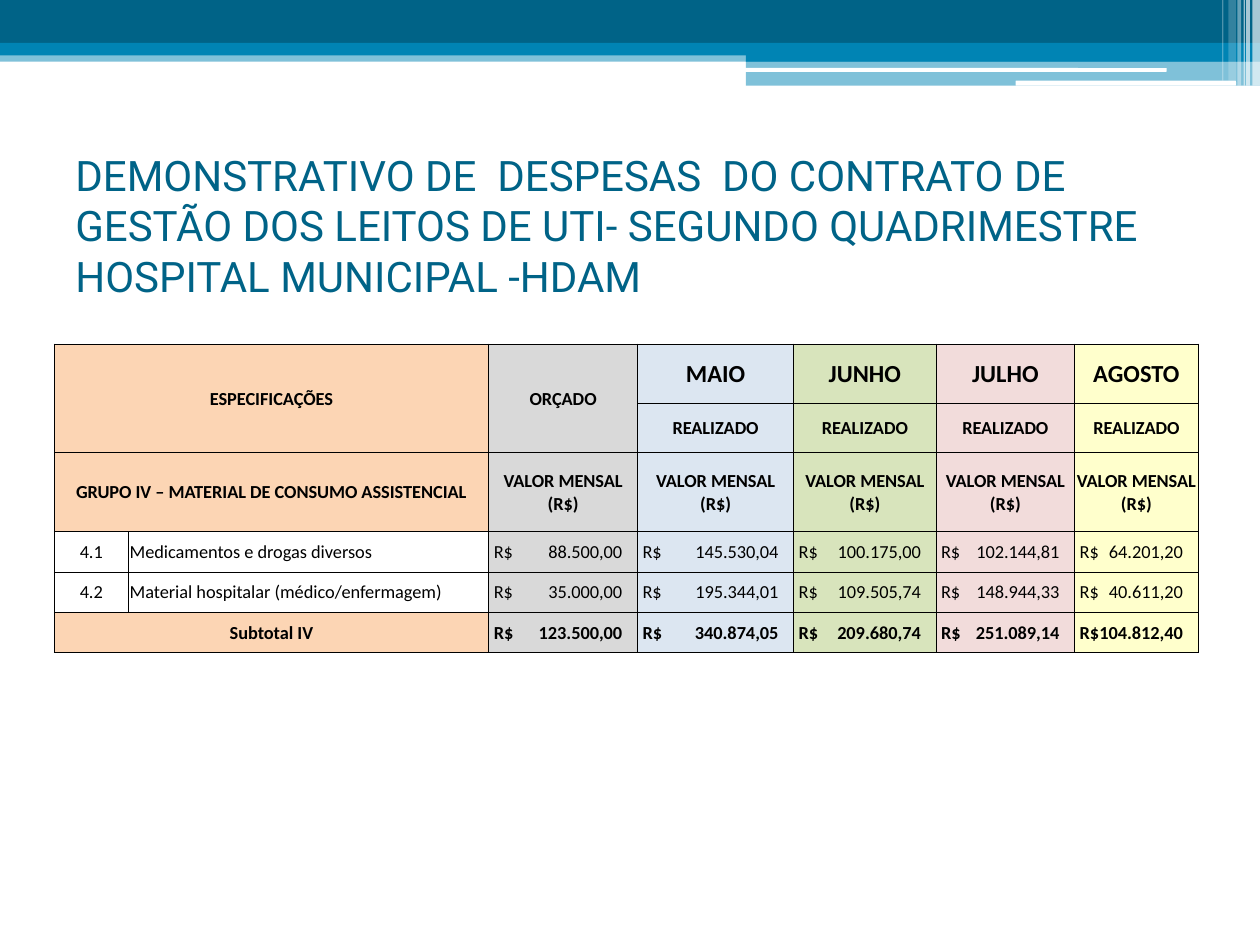
from lxml import etree
from pptx import Presentation
from pptx.dml.color import RGBColor
from pptx.enum.shapes import MSO_SHAPE
from pptx.enum.text import MSO_ANCHOR, PP_ALIGN
from pptx.oxml.ns import qn
from pptx.util import Inches, Pt

RECT, ROUND = MSO_SHAPE.RECTANGLE, MSO_SHAPE.ROUNDED_RECTANGLE
MID = MSO_ANCHOR.MIDDLE
LEFT, CENTER = PP_ALIGN.LEFT, PP_ALIGN.CENTER

DEEP, BLUE, WHITE, BLACK = "006387", "0084B4", "FFFFFF", "000000"
PEACH = "FCD5B4"
TINTS = ["D9D9D9", "DCE6F1", "D8E4BC", "F2DCDB", "FFFFCC"]


def tint(code):
    return RGBColor.from_string(code)


def apply(target, values):
    for name, value in values.items():
        setattr(target, name, value)


class Deck:
    COLS, ROWS = 100, 75
    HEAD = {"name": "Roboto", "size": Pt(24)}
    BODY = {"name": "Calibri", "size": Pt(10.5), "bold": False}
    BOLD = {**BODY, "bold": True}
    MONTH = {**BOLD, "size": Pt(14)}

    def __init__(self, wide, high):
        self.file = Presentation()
        apply(self.file, {"slide_width": Inches(wide), "slide_height": Inches(high)})
        self.unit_x = self.file.slide_width / self.COLS
        self.unit_y = self.file.slide_height / self.ROWS
        self.slide = self.file.slides.add_slide(self.file.slide_layouts[6])

    def across(self, cols):
        return round(cols * self.unit_x)

    def down(self, rows):
        return round(rows * self.unit_y)

    def place(self, col, row, wide, high):
        return self.across(col), self.down(row), self.across(wide), self.down(high)

    def bar(self, spot, code, alpha=100, kind=RECT):
        shape = self.slide.shapes.add_shape(kind, *self.place(*spot))
        shape.shadow.inherit = False
        shape.fill.solid()
        shape.fill.fore_color.rgb = tint(code)
        shape.line.fill.background()
        if alpha < 100:
            color = shape.fill._xPr.find(".//" + qn("a:srgbClr"))
            etree.SubElement(color, qn("a:alpha"), val=str(alpha * 1000))

    def label(self, frame, text, style, code, align=LEFT):
        frame.text = text
        for para in frame.paragraphs:
            para.alignment = align
            for run in para.runs:
                apply(run.font, style)
                run.font.color.rgb = tint(code)

    def title(self, spot, text):
        frame = self.slide.shapes.add_textbox(*self.place(*spot)).text_frame
        apply(frame, {"word_wrap": True, "vertical_anchor": MID})
        self.label(frame, text, self.HEAD, DEEP)

    def table(self, spot, cols, rows):
        shape = self.slide.shapes.add_table(len(rows), len(cols), *self.place(*spot))
        grid = shape.table
        apply(grid, {"first_row": False, "horz_banding": False})
        for item, wide in zip(grid.columns, cols):
            item.width = self.across(wide)
        for item, high in zip(grid.rows, rows):
            item.height = self.down(high)
        for cell in grid.iter_cells():
            apply(cell, {"margin_left": self.across(0.1), "margin_right": self.across(0.1),
                         "margin_top": self.down(0.1), "margin_bottom": 0,
                         "vertical_anchor": MID})
            self.edge(cell)
            cell.fill.background()
        return grid

    def edge(self, cell):
        props = cell._tc.get_or_add_tcPr()
        for side in ("lnL", "lnR", "lnT", "lnB"):
            line = etree.SubElement(props, qn("a:" + side), w=str(Pt(0.5)))
            fill = etree.SubElement(line, qn("a:solidFill"))
            etree.SubElement(fill, qn("a:srgbClr"), val=BLACK)

    def cell(self, cell, text, style, code=None, align=CENTER):
        self.label(cell.text_frame, text, style, BLACK, align)
        if code:
            cell.fill.solid()
            cell.fill.fore_color.rgb = tint(code)

    def money(self, cell, value, style, code, wide):
        self.cell(cell, "R$\t" + value, style, code, LEFT)
        cell.margin_left = self.across(0.4)
        props = cell.text_frame.paragraphs[0]._p.get_or_add_pPr()
        tabs = etree.SubElement(props, qn("a:tabLst"))
        etree.SubElement(tabs, qn("a:tab"), pos=str(self.across(wide - 1.6)), algn="r")


def main():
    deck = Deck(10, 7.5)
    deck.bar((0, 4, 100, 0.9), BLUE, 50)
    deck.bar((0, 0, 100, 3.4), DEEP)
    deck.bar((0, 3.4, 100, 1), BLUE)
    deck.bar((59.2, 3.9, 40.8, 1), BLUE)
    deck.bar((59.2, 4.8, 40.8, 2), BLUE, 50)
    deck.bar((59.1, 5.4, 33.5, 0.3), WHITE, kind=ROUND)
    deck.bar((80.6, 6.4, 17.5, 0.4), WHITE, kind=ROUND)
    for col, wide, high, alpha in [(99.4, 0.6, 6.8, 65), (98.9, 0.3, 6.8, 65),
                                   (98.7, 0.1, 6.8, 60), (98.2, 0.3, 6.8, 40),
                                   (97.5, 0.6, 6.4, 20), (97, 0.1, 6.4, 30)]:
        deck.bar((col, 0, wide, high), WHITE, alpha)

    cols = [5.9, 28.6, 11.8, 12.4, 11.3, 11, 9.8]
    rows = [4.7, 3.9, 6.3, 3.2, 3.2, 3.2]
    grid = deck.table((4.3, 27.3, sum(cols), sum(rows)), cols, rows)
    for top, left, low, right in [(0, 0, 1, 1), (0, 2, 1, 2), (2, 0, 2, 1), (5, 0, 5, 1)]:
        grid.cell(top, left).merge(grid.cell(low, right))

    for row, text in [(0, "ESPECIFICAÇÕES"),
                      (2, "GRUPO IV – MATERIAL DE CONSUMO ASSISTENCIAL"),
                      (5, "Subtotal IV")]:
        deck.cell(grid.cell(row, 0), text, deck.BOLD, PEACH)
    for row, code, text in [(3, "4.1", "Medicamentos e drogas diversos"),
                            (4, "4.2", "Material hospitalar (médico/enfermagem)")]:
        deck.cell(grid.cell(row, 0), code, deck.BODY)
        deck.cell(grid.cell(row, 1), text, deck.BODY, align=LEFT)

    deck.cell(grid.cell(0, 2), "ORÇADO", deck.BOLD, TINTS[0])
    months = ["MAIO", "JUNHO", "JULHO", "AGOSTO"]
    for col, (month, code) in enumerate(zip(months, TINTS[1:]), 3):
        deck.cell(grid.cell(0, col), month, deck.MONTH, code)
        deck.cell(grid.cell(1, col), "REALIZADO", deck.BOLD, code)

    sums = [
        ["88.500,00", "145.530,04", "100.175,00", "102.144,81", "64.201,20"],
        ["35.000,00", "195.344,01", "109.505,74", "148.944,33", "40.611,20"],
        ["123.500,00", "340.874,05", "209.680,74", "251.089,14", "104.812,40"],
    ]
    styles = [deck.BODY, deck.BODY, deck.BOLD]
    for col, code in enumerate(TINTS, 2):
        deck.cell(grid.cell(2, col), "VALOR MENSAL (R$)", deck.BOLD, code)
        for row, (line, style) in enumerate(zip(sums, styles), 3):
            deck.money(grid.cell(row, col), line[col - 2], style, code, cols[col])

    deck.title((5, 11.6, 90, 12.5),
               "DEMONSTRATIVO DE  DESPESAS  DO CONTRATO DE GESTÃO DOS LEITOS DE UTI- "
               "SEGUNDO QUADRIMESTRE \vHOSPITAL MUNICIPAL -HDAM")
    deck.file.save("out.pptx")


if __name__ == "__main__":
    main()
